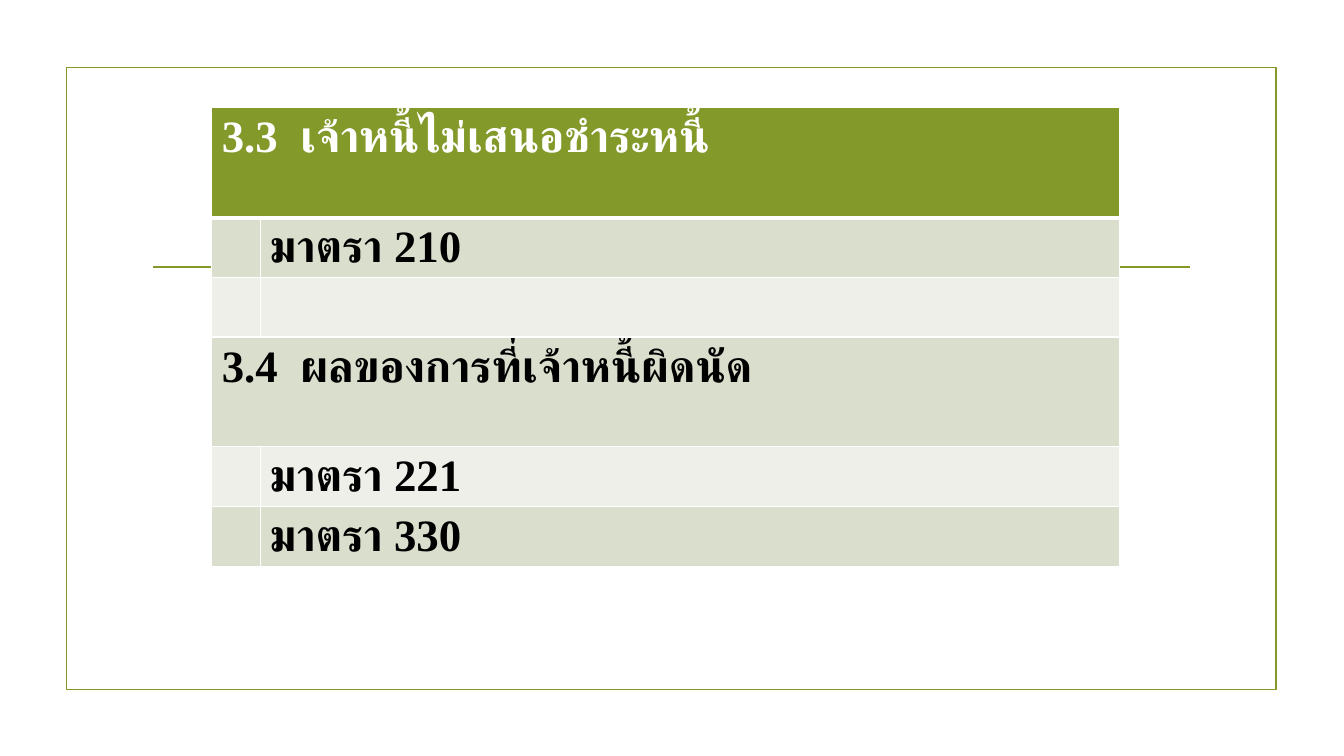
from lxml import etree
from pptx import Presentation
from pptx.dml.color import RGBColor
from pptx.enum.shapes import MSO_CONNECTOR as Connector, MSO_SHAPE as Shape
from pptx.oxml.ns import qn
from pptx.util import Inches, Pt

COLORS = {"green": "83992A", "band": "D9DECD", "light": "EDEFE8",
          "white": "FFFFFF", "black": "000000"}
FONT = "Times New Roman"

# Each row: text, whether it spans both columns, fill
ROWS = [
    ("3.3  เจ้าหนี้ไม่เสนอชำระหนี้", True, "green"),
    ("มาตรา 210", False, "band"),
    ("", False, "light"),
    ("3.4  ผลของการที่เจ้าหนี้ผิดนัด", True, "band"),
    ("มาตรา 221", False, "light"),
    ("มาตรา 330", False, "band"),
]
HEADING_HEIGHT, ITEM_HEIGHT = 1.09, 0.59
INDENT_WIDTH = 0.48


def rgb(name):
    return RGBColor.from_string(COLORS[name])


def add_frame(slide, left, top, width, height):
    """Outline of the slide, with a rule across it."""
    frame = slide.shapes.add_shape(Shape.RECTANGLE, Inches(left), Inches(top),
                                   Inches(width), Inches(height))
    frame.shadow.inherit = False
    frame.fill.background()

    side_gap, rule_y = 0.86, Inches(top + 1.98)
    rule = slide.shapes.add_connector(
        Connector.STRAIGHT, Inches(left + side_gap), rule_y,
        Inches(left + width - side_gap), rule_y)
    etree.SubElement(rule._element.spPr, qn("a:effectLst"))
    for outline in (frame.line, rule.line):
        outline.color.rgb = rgb("green")
        outline.width = Pt(1.25)


def set_borders(cell, bottom_width):
    properties = cell._tc.get_or_add_tcPr()
    widths = {"a:lnL": 1, "a:lnR": 1, "a:lnT": 1, "a:lnB": bottom_width}
    for position, (tag, width) in enumerate(widths.items()):
        border = etree.Element(qn(tag), w=str(Pt(width)))
        fill = etree.SubElement(border, qn("a:solidFill"))
        etree.SubElement(fill, qn("a:srgbClr"), val=COLORS["white"])
        properties.insert(position, border)


def write_text(cell, text, color):
    run = cell.text_frame.paragraphs[0].add_run()
    run.text = text
    run.font.size = Pt(32)
    run.font.bold = True
    run.font.name = FONT
    run.font.color.rgb = rgb(color)
    # Thai letters take the complex-script font
    etree.SubElement(run._r.get_or_add_rPr(), qn("a:cs"), typeface=FONT)


def add_sections_table(slide, left, top, width):
    heights = [HEADING_HEIGHT if spans else ITEM_HEIGHT for _, spans, _ in ROWS]
    table = slide.shapes.add_table(len(ROWS), 2, Inches(left), Inches(top),
                                   Inches(width), Inches(sum(heights))).table
    table.columns[0].width = Inches(INDENT_WIDTH)
    table.columns[1].width = Inches(width - INDENT_WIDTH)

    for index, (text, spans, fill) in enumerate(ROWS):
        table.rows[index].height = Inches(heights[index])
        first, second = table.cell(index, 0), table.cell(index, 1)
        for cell in (first, second):
            cell.fill.solid()
            cell.fill.fore_color.rgb = rgb(fill)
            set_borders(cell, 3 if index == 0 else 1)
        if spans:
            first.merge(second)
        if text:
            write_text(first if spans else second, text,
                       "white" if index == 0 else "black")


def main():
    presentation = Presentation()
    presentation.slide_width = Inches(13.33)
    presentation.slide_height = Inches(7.5)
    slide = presentation.slides.add_slide(presentation.slide_layouts[6])
    add_frame(slide, 0.66, 0.67, 12, 6.17)
    add_sections_table(slide, 2.1, 1.07, 9)
    presentation.save("out.pptx")


if __name__ == "__main__":
    main()
